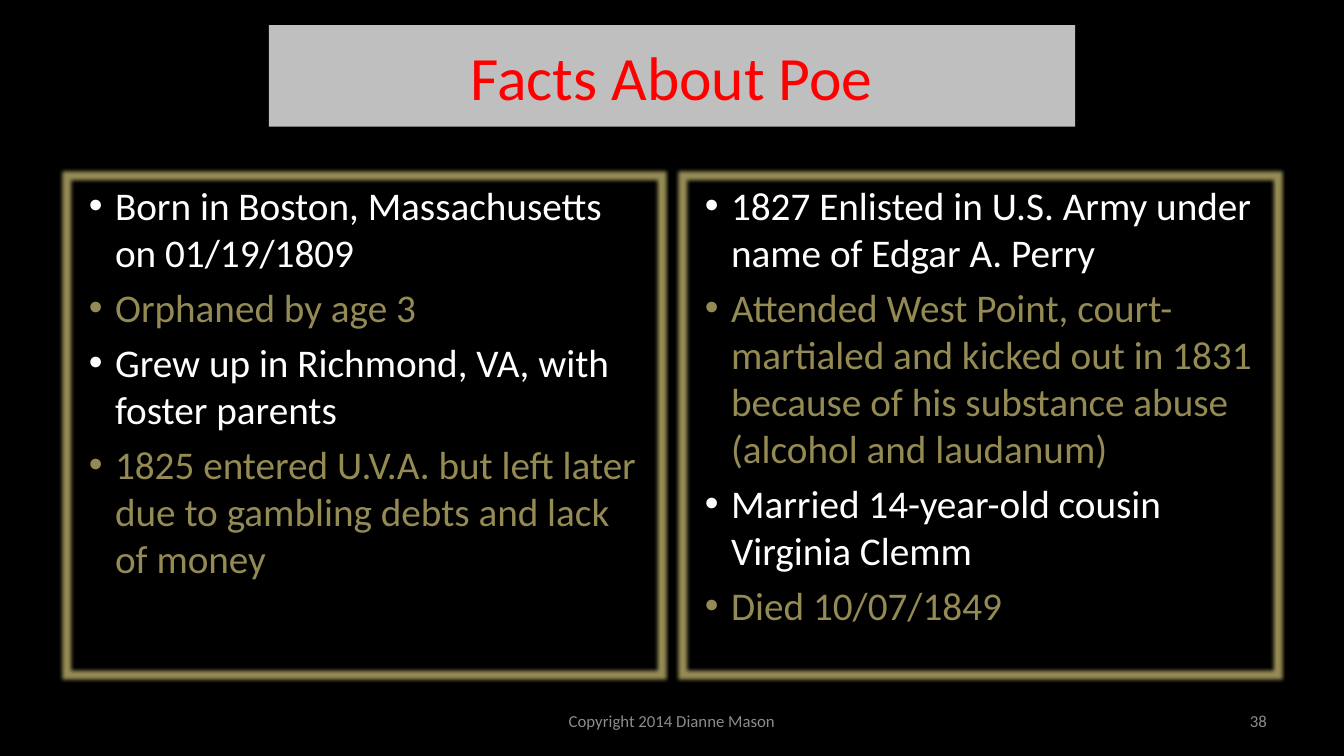
import pptx
import pptx.dml.color
import pptx.enum.text
import pptx.oxml
import pptx.oxml.ns
import pptx.util

Pt = pptx.util.Pt
Align = pptx.enum.text.PP_ALIGN
Anchor = pptx.enum.text.MSO_ANCHOR

BLACK, WHITE, RED = "000000", "FFFFFF", "FF0000"
SILVER, GREY, KHAKI = "BFBFBF", "8C8C8C", "948A54"

SLIDE_WIDTH, SLIDE_HEIGHT = 960, 540
MARGIN, COLUMN_GAP = 48, 16

EARLY_LIFE = [
    "Born in Boston, Massachusetts on 01/19/1809",
    "Orphaned by age 3",
    "Grew up in Richmond, VA, with foster parents",
    "1825 entered U.V.A. but left later due to gambling debts and lack of money",
]
LATER_LIFE = [
    "1827 Enlisted in U.S. Army under name of Edgar A. Perry",
    "Attended West Point, court-martialed and kicked out in 1831 because of "
    "his substance abuse (alcohol and laudanum)",
    "Married 14-year-old cousin Virginia Clemm",
    "Died 10/07/1849",
]


def color(hex_string):
    return pptx.dml.color.RGBColor.from_string(hex_string)


def place(part, box):
    part.left, part.top, part.width, part.height = (Pt(n) for n in box)


def format_runs(paragraph, size, hex_string):
    for run in paragraph.runs:
        run.font.name = "Calibri"
        run.font.size = Pt(size)
        run.font.color.rgb = color(hex_string)


def add_glow(part, hex_string, radius):
    part._element.spPr.append(pptx.oxml.parse_xml(
        f'<a:effectLst {pptx.oxml.ns.nsdecls("a")}><a:glow rad="{Pt(radius)}">'
        f'<a:srgbClr val="{hex_string}"/></a:glow></a:effectLst>'))


def build_title(title, box, words):
    place(title, box)
    title.fill.solid()
    title.fill.fore_color.rgb = color(SILVER)
    title.text_frame.text = words
    title.text_frame.vertical_anchor = Anchor.MIDDLE
    heading = title.text_frame.paragraphs[0]
    heading.alignment = Align.CENTER
    format_runs(heading, 44, RED)


def build_fact_panel(panel, box, facts):
    place(panel, box)
    # Glowing frame
    panel.line.color.rgb = color(KHAKI)
    panel.line.width = Pt(0.75)
    add_glow(panel, KHAKI, 5)
    # Bulleted facts in alternating colours
    panel.text_frame.text = "\n".join(facts)
    panel.text_frame.auto_size = pptx.enum.text.MSO_AUTO_SIZE.NONE
    for index, fact in enumerate(panel.text_frame.paragraphs):
        indents = fact._p.get_or_add_pPr()
        indents.set("marL", str(Pt(27)))
        indents.set("indent", str(Pt(-18.75)))
        format_runs(fact, 28, KHAKI if index % 2 else WHITE)


def build_footer_text(slide, box, words, alignment):
    footer = slide.shapes.add_textbox(*(Pt(n) for n in box)).text_frame
    footer.word_wrap = True
    footer.vertical_anchor = Anchor.MIDDLE
    footer.text = words
    footer.paragraphs[0].alignment = alignment
    format_runs(footer.paragraphs[0], 12, GREY)


def build_facts_slide(deck):
    slide = deck.slides.add_slide(deck.slide_layouts.get_by_name("Two Content"))
    slide.background.fill.solid()
    slide.background.fill.fore_color.rgb = color(BLACK)
    title, *panels = slide.placeholders

    # Title band, centred on the slide
    title_width = 576
    build_title(title, ((SLIDE_WIDTH - title_width) / 2, 18, title_width, 72.5),
                "Facts About Poe")

    # Two equal columns of facts
    column_width = (SLIDE_WIDTH - 2 * MARGIN - COLUMN_GAP) / 2
    for column, (panel, facts) in enumerate(zip(panels, (EARLY_LIFE, LATER_LIFE))):
        left = MARGIN + column * (column_width + COLUMN_GAP)
        build_fact_panel(panel, (left, 126, column_width, 356.5), facts)

    # Footer and slide number
    footer_top, footer_height = 500.5, 28.75
    build_footer_text(slide, (328, footer_top, 304, footer_height),
                      "Copyright 2014 Dianne Mason", Align.CENTER)
    number_width = 224
    build_footer_text(slide, (SLIDE_WIDTH - MARGIN - number_width, footer_top,
                              number_width, footer_height), "38", Align.RIGHT)


def main():
    deck = pptx.Presentation()
    deck.slide_width, deck.slide_height = Pt(SLIDE_WIDTH), Pt(SLIDE_HEIGHT)
    build_facts_slide(deck)
    deck.save("out.pptx")


if __name__ == "__main__":
    main()
